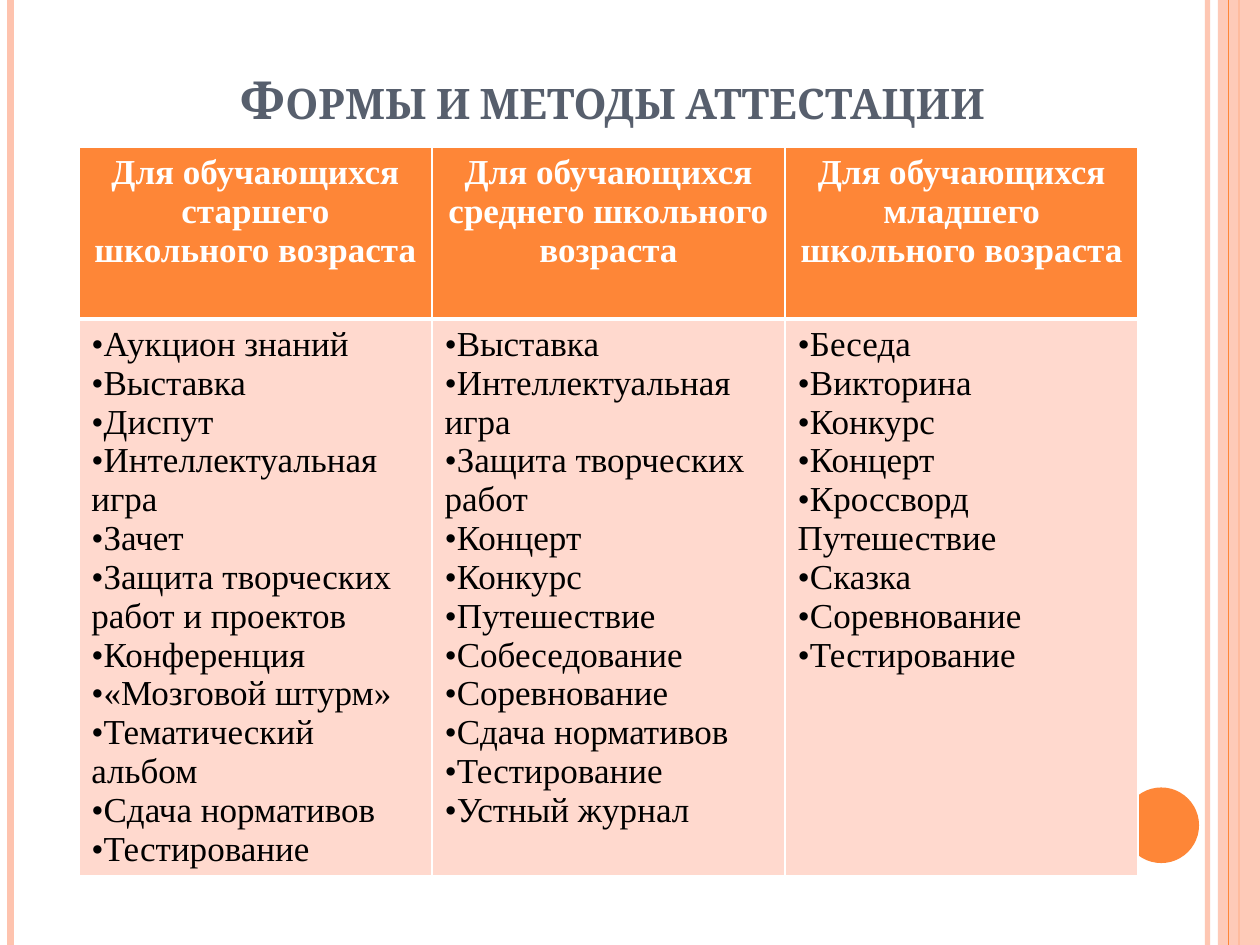
from pptx import Presentation
from pptx.dml.color import RGBColor
from pptx.enum.shapes import MSO_CONNECTOR, MSO_SHAPE
from pptx.enum.text import MSO_ANCHOR, MSO_AUTO_SIZE, PP_ALIGN
from pptx.oxml.ns import qn
from pptx.util import Pt
from lxml.etree import SubElement

ORANGE = RGBColor(0xFE, 0x86, 0x37)
PEACH = RGBColor(0xFE, 0xC3, 0xAE)
PALE = RGBColor(0xFF, 0xD9, 0xCE)
SLATE = RGBColor(0x57, 0x5F, 0x6D)
WHITE = RGBColor(0xFF, 0xFF, 0xFF)
BLACK = RGBColor(0, 0, 0)

BODY_FONT = "Times New Roman"
W, H = 720, 540
COL_W = 201.8
HEAD_H, BODY_H = 98, 317.5

COLUMNS = [
    ("Для обучающихся старшего школьного возраста",
     ["Аукцион знаний", "Выставка", "Диспут", "Интеллектуальная игра",
      "Зачет", "Защита творческих работ и проектов", "Конференция",
      "«Мозговой штурм»", "Тематический альбом", "Сдача нормативов",
      "Тестирование"]),
    ("Для обучающихся среднего школьного возраста",
     ["Выставка", "Интеллектуальная игра", "Защита творческих работ",
      "Концерт", "Конкурс", "Путешествие", "Собеседование",
      "Соревнование", "Сдача нормативов", "Тестирование",
      "Устный журнал"]),
    ("Для обучающихся младшего школьного возраста",
     ["Беседа", "Викторина", "Конкурс", "Концерт",
      "Кроссворд Путешествие", "Сказка", "Соревнование",
      "Тестирование"]),
]


def set_alpha(fill, percent):
    """Make a solid fill partly transparent."""
    clr = fill._xPr.find(qn("a:solidFill"))[0]
    SubElement(clr, qn("a:alpha"), val=str(percent * 1000))


def add_rule(s, x, color, width, alpha=100):
    """Draw a vertical line over the full slide height."""
    ln = s.shapes.add_connector(MSO_CONNECTOR.STRAIGHT, Pt(x), 0, Pt(x), Pt(H))
    ln.line.color.rgb = color
    ln.line.width = Pt(width)
    if alpha < 100:
        set_alpha(ln.line.fill, alpha)
    SubElement(ln._element.spPr, qn("a:effectLst"))


def add_plain(s, kind, x, y, w, h, color, alpha=100):
    """Draw a filled shape without outline or shadow."""
    sp = s.shapes.add_shape(kind, Pt(x), Pt(y), Pt(w), Pt(h))
    sp.shadow.inherit = False
    sp.fill.solid()
    sp.fill.fore_color.rgb = color
    if alpha < 100:
        set_alpha(sp.fill, alpha)
    sp.line.fill.background()


def set_font(r, name, size, color, bold):
    """Format one run."""
    r.font.name = name
    r.font.size = Pt(size)
    r.font.bold = bold
    r.font.color.rgb = color


def set_title(s, text):
    """Place and format the title in small capitals."""
    sp = s.shapes.title
    sp.left, sp.top, sp.width, sp.height = Pt(56.2), Pt(28), Pt(588), Pt(50)
    tf = sp.text_frame
    tf.text = text
    tf.auto_size = MSO_AUTO_SIZE.NONE
    tf.vertical_anchor = MSO_ANCHOR.BOTTOM
    p = tf.paragraphs[0]
    p.alignment = PP_ALIGN.CENTER
    r = p.runs[0]
    set_font(r, "Cambria", 30, SLATE, True)
    r._r.get_or_add_rPr().set("cap", "small")


def set_borders(cell, widths):
    """Give a cell white borders, with widths keyed by side."""
    tcPr = cell._tc.get_or_add_tcPr()
    for side, width in widths.items():
        ln = SubElement(tcPr, qn(f"a:ln{side}"), w=str(Pt(width)))
        fill = SubElement(ln, qn("a:solidFill"))
        SubElement(fill, qn("a:srgbClr"), val=str(WHITE))


def set_bullet(p):
    """Put a bullet directly before the text of a paragraph."""
    pPr = p._p.get_or_add_pPr()
    pPr.set("marL", "0")
    pPr.set("indent", "0")
    SubElement(pPr, qn("a:buFont"), typeface=BODY_FONT)
    SubElement(pPr, qn("a:buChar"), char="•")


def fill_cell(cell, lines, fill, color, header):
    """Write a header or a bulleted list into a cell."""
    set_borders(cell, {"L": 1, "R": 1, "T": 1 if header else 3,
                       "B": 3 if header else 1})
    cell.fill.solid()
    cell.fill.fore_color.rgb = fill
    tf = cell.text_frame
    tf.text = "\n".join(lines)
    for p in tf.paragraphs:
        set_font(p.runs[0], BODY_FONT, 20, color, header)
        if header:
            p.alignment = PP_ALIGN.CENTER
        else:
            set_bullet(p)


def add_methods_table(s):
    """Add the table with one column for each age group."""
    n = len(COLUMNS)
    tbl = s.shapes.add_table(2, n, Pt(45), Pt(84.2), Pt(COL_W * n),
                             Pt(HEAD_H + BODY_H)).table
    tbl.horz_banding = False
    tbl.rows[0].height, tbl.rows[1].height = Pt(HEAD_H), Pt(BODY_H)
    for i, (head, items) in enumerate(COLUMNS):
        tbl.columns[i].width = Pt(COL_W)
        fill_cell(tbl.cell(0, i), [head], ORANGE, WHITE, True)
        fill_cell(tbl.cell(1, i), items, PALE, BLACK, False)


def main():
    """Build the slide and save it."""
    prs = Presentation()
    prs.slide_width, prs.slide_height = Pt(W), Pt(H)
    s = prs.slides.add_slide(prs.slide_layouts[5])
    add_rule(s, 690, PEACH, 3, 93)
    add_rule(s, 6, PEACH, 4.5)
    add_rule(s, 708, ORANGE, 1.5)
    add_plain(s, MSO_SHAPE.RECTANGLE, 696, 0, 24, H, PEACH, 87)
    add_rule(s, 702, ORANGE, 0.75)
    add_plain(s, MSO_SHAPE.OVAL, 642, 450, 43.2, 43.2, ORANGE)
    set_title(s, "Формы и методы аттестации")
    add_methods_table(s)
    prs.save("out.pptx")


if __name__ == "__main__":
    main()
